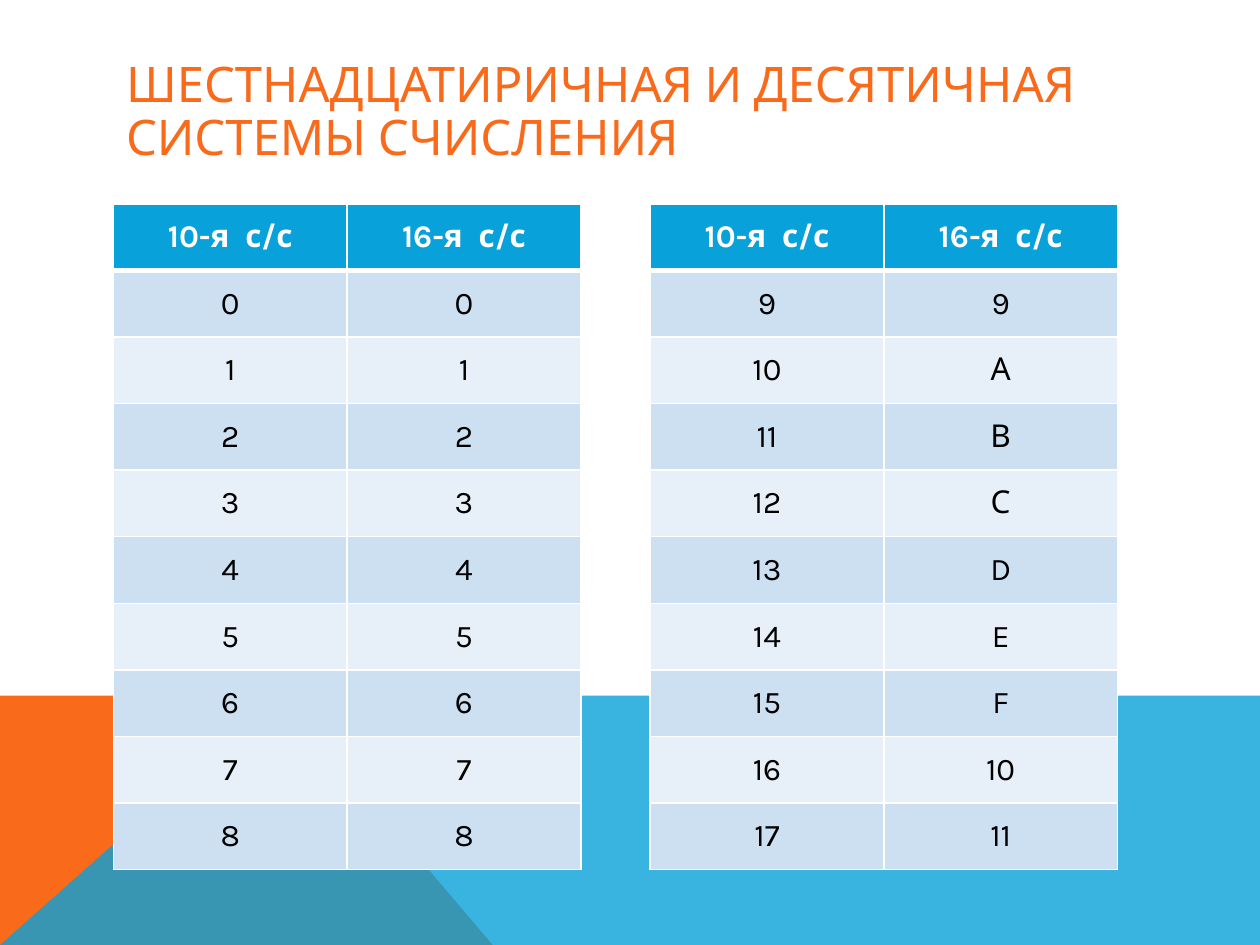
import pptx
import pptx.dml.color
import pptx.enum.text
import pptx.oxml
import pptx.oxml.ns
import pptx.util
from pptx.util import Inches

RGBColor = pptx.dml.color.RGBColor
ORANGE = RGBColor(0xF9, 0x6A, 0x1B)
BLUE = RGBColor(0x08, 0xA1, 0xD9)
DARK_BAND = RGBColor(0xCC, 0xE0, 0xF1)
LIGHT_BAND = RGBColor(0xE7, 0xF0, 0xF8)
WHITE = RGBColor(0xFF, 0xFF, 0xFF)
BLACK = RGBColor(0, 0, 0)

# Content
TITLE = "ШЕСТНАДЦАТИРИЧНАЯ И ДЕСЯТИЧНАЯ  СИСТЕМЫ СЧИСЛЕНИЯ"
HEADER = ("10-я  с/с", "16-я  с/с")
HEX_COLUMNS = [
    ["0", "1", "2", "3", "4", "5", "6", "7", "8"],
    ["9", "А", "В", "С", "D", "E", "F", "10", "11"],
]

# Layout, in inches
SLIDE_WIDTH, SLIDE_HEIGHT = 10, 7.5
TITLE_BOX = {"left": 0.9, "top": 0.4, "width": 8.22, "height": 0.99}
TABLE_LEFTS = (0.9, 5.16)
TABLE_TOP, TABLE_WIDTH, TABLE_HEIGHT = 1.62, 3.71, 5.28
BAND_TOP, BAND_PEAK = 5.52, 2.23
BANDS = [  # points, colour, opacity in percent
    ([(0, SLIDE_HEIGHT), (0, BAND_TOP), (BAND_PEAK, BAND_TOP),
      (3.91, SLIDE_HEIGHT)], ORANGE, 100),
    ([(0, SLIDE_HEIGHT), (BAND_PEAK, BAND_TOP), (SLIDE_WIDTH, BAND_TOP),
      (SLIDE_WIDTH, SLIDE_HEIGHT)], BLUE, 80),
]
TITLE_FONT = {"name": "Karla", "size": pptx.util.Pt(28), "bold": False}
CELL_FONT = {"name": "Karla", "size": pptx.util.Pt(18)}


def format_font(font, values, color):
    for name, value in values.items():
        setattr(font, name, value)
    font.color.rgb = color


def add_band(slide, points, color, opacity):
    corners = [(Inches(x), Inches(y)) for x, y in points]
    builder = slide.shapes.build_freeform(*corners[0])
    builder.add_line_segments(corners[1:], close=True)
    shape = builder.convert_to_shape()
    shape.shadow.inherit = False
    shape.line.fill.background()
    shape.fill.solid()
    shape.fill.fore_color.rgb = color
    if opacity < 100:
        color_element = shape.fill._xPr.find(".//" + pptx.oxml.ns.qn("a:srgbClr"))
        color_element.append(pptx.oxml.parse_xml(
            f'<a:alpha {pptx.oxml.ns.nsdecls("a")} val="{opacity * 1000}"/>'))


def set_borders(cell, widths):
    properties = cell._tc.get_or_add_tcPr()
    for index, (side, width) in enumerate(widths.items()):
        properties.insert(index, pptx.oxml.parse_xml(
            f'<a:ln{side} {pptx.oxml.ns.nsdecls("a")} w="{pptx.util.Pt(width)}">'
            f'<a:solidFill><a:srgbClr val="{WHITE}"/></a:solidFill></a:ln{side}>'))


def add_number_table(slide, left, rows):
    table = slide.shapes.add_table(
        len(rows), len(HEADER), Inches(left), Inches(TABLE_TOP),
        Inches(TABLE_WIDTH), Inches(TABLE_HEIGHT)).table
    for row_index, row in enumerate(rows):
        is_header = row_index == 0
        band = DARK_BAND if row_index % 2 else LIGHT_BAND
        for column_index, text in enumerate(row):
            cell = table.cell(row_index, column_index)
            cell.text = text
            cell.vertical_anchor = pptx.enum.text.MSO_ANCHOR.MIDDLE
            cell.fill.solid()
            cell.fill.fore_color.rgb = BLUE if is_header else band
            paragraph = cell.text_frame.paragraphs[0]
            paragraph.alignment = pptx.enum.text.PP_ALIGN.CENTER
            format_font(paragraph.runs[0].font, {**CELL_FONT, "bold": is_header},
                        WHITE if is_header else BLACK)
            set_borders(cell, {"L": 1, "R": 1, "T": 3 if row_index == 1 else 1,
                               "B": 3 if is_header else 1})


def main():
    presentation = pptx.Presentation()
    presentation.slide_width = Inches(SLIDE_WIDTH)
    presentation.slide_height = Inches(SLIDE_HEIGHT)
    slide = presentation.slides.add_slide(presentation.slide_layouts[5])

    # Coloured bands at the foot
    for band in BANDS:
        add_band(slide, *band)

    # Title
    title = slide.shapes.title
    for name, value in TITLE_BOX.items():
        setattr(title, name, Inches(value))
    title.text_frame.text = TITLE
    title.text_frame.auto_size = pptx.enum.text.MSO_AUTO_SIZE.NONE
    title.text_frame.vertical_anchor = pptx.enum.text.MSO_ANCHOR.MIDDLE
    paragraph = title.text_frame.paragraphs[0]
    paragraph.alignment = pptx.enum.text.PP_ALIGN.LEFT
    paragraph.line_spacing = 0.9
    format_font(paragraph.runs[0].font, TITLE_FONT, ORANGE)

    # Number tables: decimal values run on from one table to the next
    first = 0
    for left, hex_values in zip(TABLE_LEFTS, HEX_COLUMNS):
        rows = [HEADER] + [(str(number), value)
                           for number, value in enumerate(hex_values, first)]
        add_number_table(slide, left, rows)
        first += len(hex_values)

    presentation.save("out.pptx")


if __name__ == "__main__":
    main()
